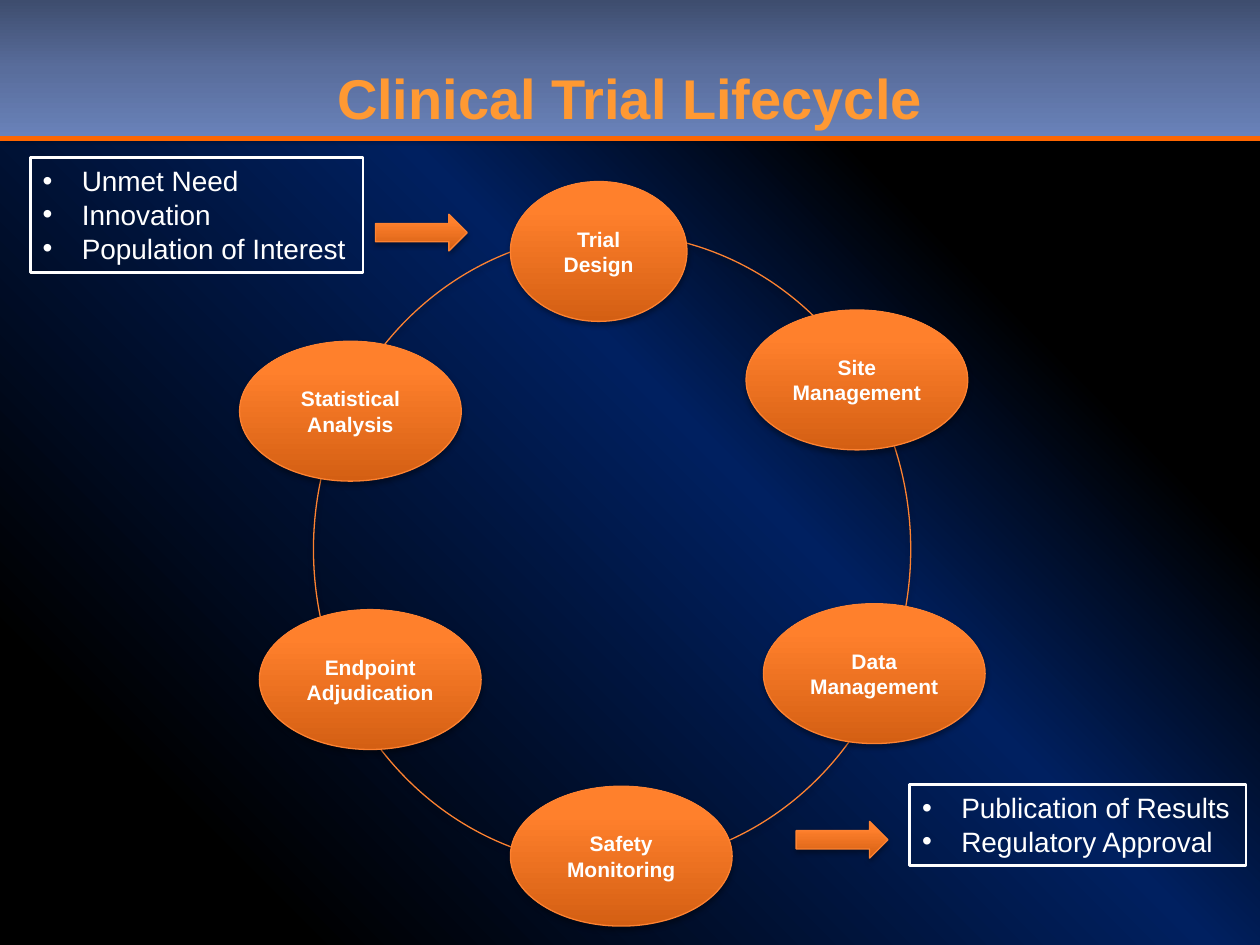
from lxml import etree
from pptx import Presentation
from pptx.dml.color import RGBColor
from pptx.enum import shapes, text
from pptx.oxml.ns import qn
from pptx.util import Cm, Pt

COLORS = {
    "title": "FF9933", "rule": "FF6600", "outline": "FD8231",
    "white": "FFFFFF", "black": "000000",
}
BACKGROUND = [(14, "000000"), (55, "002060"), (75, "000000")]
HEADER = [(0, "3E4D6E"), (50, "596D9C"), (100, "6982B9")]
ORANGE = [(0, "D45F13"), (80, "FF802C"), (100, "FF812E")]

TITLE = "Clinical Trial Lifecycle"
STAGE_WIDTH, STAGE_HEIGHT = 4.47, 2.82
# lines, left, top, width
STAGES = [
    (["Trial Design"], 10.29, 3.66, 3.56),
    (["Site", "Management"], 15.04, 6.25, STAGE_WIDTH),
    (["Data", "Management"], 15.39, 12.17, STAGE_WIDTH),
    (["Safety", "Monitoring"], 10.29, 15.85, STAGE_WIDTH),
    (["Endpoint", "Adjudication"], 5.23, 12.29, STAGE_WIDTH),
    (["Statistical", "Analysis"], 4.83, 6.88, STAGE_WIDTH),
]
RING = (6.32, 4.7, 12.04, 12.75)
# lines, box of the list
LISTS = [
    (["Unmet Need", "Innovation", "Population of Interest"], (0.61, 3.18, 6.71, 2.31)),
    (["Publication of Results", "Regulatory Approval"], (18.34, 15.82, 6.78, 1.63)),
]
ARROWS = [(7.57, 4.32, 1.85, 0.74), (16.05, 16.56, 1.85, 0.74)]


def rgb(name):
    return RGBColor.from_string(COLORS[name])


def add_node(parent, tag, **attributes):
    node = etree.SubElement(parent, qn(tag))
    for key, value in attributes.items():
        node.set(key, str(value))
    return node


def set_gradient(fill, owner, stops, angle):
    """Fill with (percent, hex) stops; the angle runs clockwise in degrees."""
    fill.gradient()
    gradient = next(owner.iter(qn("a:gradFill")))
    for child in list(gradient):
        gradient.remove(child)
    stop_list = add_node(gradient, "a:gsLst")
    for percent, color in stops:
        stop = add_node(stop_list, "a:gs", pos=percent * 1000)
        add_node(stop, "a:srgbClr", val=color)
    add_node(gradient, "a:lin", ang=angle * 60000, scaled=0)


def add_shadow(effects, blur, distance, angle, opacity):
    shadow = add_node(effects, "a:outerShdw", blurRad=Pt(blur), dist=Pt(distance),
                      dir=angle * 60000, algn="ctr", rotWithShape=0)
    color = add_node(shadow, "a:srgbClr", val=COLORS["black"])
    add_node(color, "a:alpha", val=opacity * 1000)


def add_figure(slide, kind, box, stops=None, angle=270, outline=True):
    shape = slide.shapes.add_shape(kind, *map(Cm, box))
    if stops:
        set_gradient(shape.fill, shape.element, stops, angle)
    else:
        shape.fill.background()
    if outline:
        shape.line.color.rgb = rgb("outline")
        shape.line.width = Pt(0.75)
    else:
        shape.line.fill.background()
    shape.shadow.inherit = False
    effects = next(shape.element.iter(qn("a:effectLst")))
    add_shadow(effects, 3.1, 1.8, 90, 35)
    return shape


def write(frame, lines, size, color="white", bold=False,
          align=text.PP_ALIGN.CENTER, anchor=text.MSO_ANCHOR.MIDDLE, spacing=None):
    frame.vertical_anchor = anchor
    for index, line in enumerate(lines):
        paragraph = frame.add_paragraph() if index else frame.paragraphs[0]
        paragraph.alignment = align
        paragraph.line_spacing = spacing
        run = paragraph.add_run()
        run.text = line
        run.font.name = "Arial"
        run.font.size = Pt(size)
        run.font.bold = bold
        run.font.color.rgb = rgb(color)


def add_bullets(frame):
    indent = Cm(0.79)
    for paragraph in frame.paragraphs:
        properties = paragraph._p.get_or_add_pPr()
        properties.set("marL", str(indent))
        properties.set("indent", str(-indent))
        add_node(properties, "a:buFont", typeface="Arial")
        add_node(properties, "a:buChar", char="•")


def add_list(slide, lines, box):
    shape = slide.shapes.add_textbox(*map(Cm, box))
    shape.line.color.rgb = rgb("white")
    shape.line.width = Pt(1.5)
    frame = shape.text_frame
    frame.word_wrap = False
    frame.auto_size = text.MSO_AUTO_SIZE.SHAPE_TO_FIT_TEXT
    write(frame, lines, 16, align=text.PP_ALIGN.LEFT, anchor=text.MSO_ANCHOR.TOP)
    add_bullets(frame)


def add_header(slide, width):
    bar = add_figure(slide, shapes.MSO_SHAPE.RECTANGLE, (0, 0, 25.4, 2.77),
                     HEADER, angle=90, outline=False)
    rule = slide.shapes.add_connector(
        shapes.MSO_CONNECTOR.STRAIGHT, 0, Cm(2.79), width, Cm(2.79))
    rule.line.color.rgb = rgb("rule")
    rule.line.width = Pt(3)
    add_node(rule.element.spPr, "a:effectLst")

    title = slide.shapes.title
    title.left, title.top, title.width, title.height = map(Cm, (1.27, 0.48, 22.86, 3.18))
    write(title.text_frame, [TITLE], 32, color="title", bold=True, spacing=0.85)
    font = title.text_frame.paragraphs[0].runs[0]._r.get_or_add_rPr()
    effects = etree.Element(qn("a:effectLst"))
    add_shadow(effects, 0, 2.8, 45, 100)
    font.find(qn("a:solidFill")).addnext(effects)
    for behind in (bar, rule):
        title.element.addprevious(behind.element)


def main():
    presentation = Presentation()
    presentation.slide_width, presentation.slide_height = Cm(25.4), Cm(19.05)
    slide = presentation.slides.add_slide(presentation.slide_layouts[5])
    set_gradient(slide.background.fill, slide.element, BACKGROUND, 315)
    add_header(slide, presentation.slide_width)

    add_figure(slide, shapes.MSO_SHAPE.OVAL, RING)
    for lines, left, top, width in STAGES:
        stage = add_figure(slide, shapes.MSO_SHAPE.OVAL,
                           (left, top, width, STAGE_HEIGHT), ORANGE)
        write(stage.text_frame, lines, 12, bold=True)
    for lines, box in LISTS:
        add_list(slide, lines, box)
    for box in ARROWS:
        add_figure(slide, shapes.MSO_SHAPE.RIGHT_ARROW, box, ORANGE)

    presentation.save("out.pptx")


if __name__ == "__main__":
    main()
